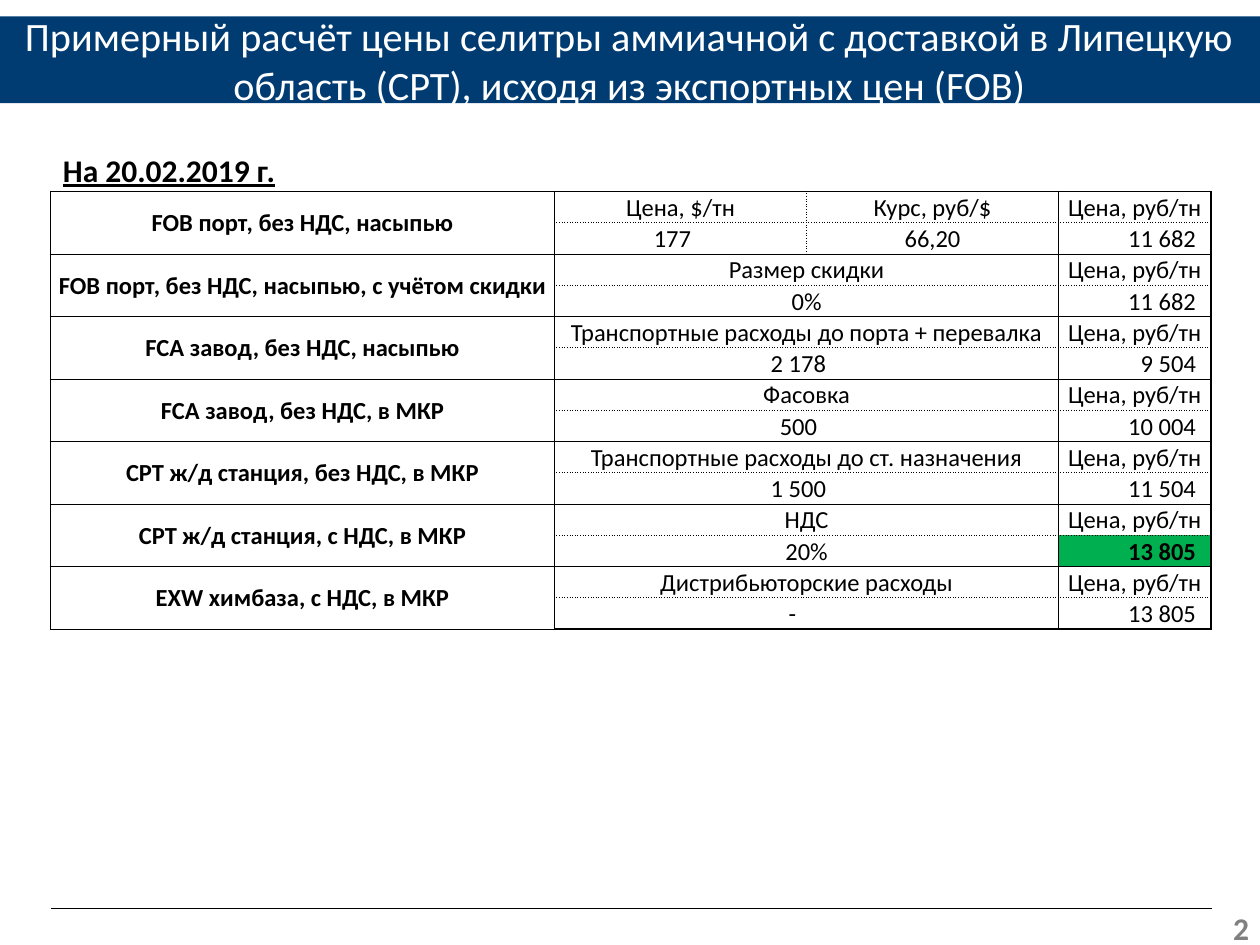
from typing import NamedTuple

from lxml import etree
from pptx import Presentation
from pptx import util as u
from pptx.dml import color
from pptx.enum import shapes, text
from pptx.oxml import ns

BLACK, WHITE, NAVY, GREEN, GRAY = "000000", "FFFFFF", "003C72", "00B050", "808080"
CENTER, RIGHT = text.PP_ALIGN.CENTER, text.PP_ALIGN.RIGHT
LEFT_EDGE, RIGHT_EDGE = 1.02, 24.43
COLUMN_WIDTHS = (10.16, 5.08, 5.08, 3.07)
ROW_HEIGHT = 0.63
CELL_INSET, FIGURE_INSET, DASH_INSET = 0.03, 0.36, 0.6


class Stage(NamedTuple):
    """One step of the price build-up, drawn as two table rows."""
    basis: str
    factors: tuple[str, ...]
    values: tuple[str, ...]
    price: str
    highlighted: bool = False


class Border(NamedTuple):
    points: float
    dash: str = "solid"


THICK, THIN, DOTTED = Border(1), Border(0.5), Border(0.5, "sysDot")

STAGES = (
    Stage("FOB порт, без НДС, насыпью", ("Цена, $/тн", "Курс, руб/$"), ("177", "66,20"), "11 682"),
    Stage("FOB порт, без НДС, насыпью, с учётом скидки", ("Размер скидки",), ("0%",), "11 682"),
    Stage("FCA завод, без НДС, насыпью", ("Транспортные расходы до порта + перевалка",),
          ("2 178",), "9 504"),
    Stage("FCA завод, без НДС, в МКР", ("Фасовка",), ("500",), "10 004"),
    Stage("СРТ ж/д станция, без НДС, в МКР", ("Транспортные расходы до ст. назначения",),
          ("1 500",), "11 504"),
    Stage("СРТ ж/д станция, с НДС, в МКР", ("НДС",), ("20%",), "13 805", True),
    Stage("EXW химбаза, с НДС, в МКР", ("Дистрибьюторские расходы",), ("-",), "13 805"),
)


def rgb(value: str) -> color.RGBColor:
    return color.RGBColor.from_string(value)


def write(frame, wording: str, size: float, hue: str = BLACK, align=None, **formats) -> None:
    para = frame.paragraphs[0]
    para.alignment = align
    span = para.add_run()
    span.text = wording
    span.font.color.rgb = rgb(hue)
    for name, value in {"name": "Calibri", "size": u.Pt(size), **formats}.items():
        setattr(span.font, name, value)


def place(shape, left: float, top: float, width: float, height: float) -> None:
    for name, value in {"left": left, "top": top, "width": width, "height": height}.items():
        setattr(shape, name, u.Cm(value))


def set_borders(cell, **borders: Border) -> None:
    """Draw cell edges; keys are L, R, T and B, in that order."""
    properties = cell._tc.get_or_add_tcPr()
    for side, border in borders.items():
        line = etree.SubElement(properties, ns.qn(f"a:ln{side}"), w=str(u.Pt(border.points)))
        fill = etree.SubElement(line, ns.qn("a:solidFill"))
        etree.SubElement(fill, ns.qn("a:srgbClr"), val=BLACK)
        etree.SubElement(line, ns.qn("a:prstDash"), val=border.dash)


def fill_cell(cell, wording: str, align=CENTER, right_inset: float = CELL_INSET,
              bold: bool = False) -> None:
    formats = {"margin_left": u.Cm(CELL_INSET), "margin_top": u.Cm(CELL_INSET),
               "margin_right": u.Cm(right_inset), "margin_bottom": 0,
               "vertical_anchor": text.MSO_ANCHOR.MIDDLE}
    for name, value in formats.items():
        setattr(cell, name, value)
    write(cell.text_frame, wording, 14, align=align, bold=bold)


def value_inset(value: str) -> float:
    """Plain amounts sit a little left of centre; percentages and rates do not."""
    if value == "-":
        return DASH_INSET
    return CELL_INSET if "%" in value or "," in value else FIGURE_INSET


def frame_cells(table) -> None:
    last_row = len(table.rows) - 1
    for row in range(last_row + 1):
        upper = row % 2 == 0
        for column in range(len(table.columns)):
            cell = table.cell(row, column)
            inner = THIN if column == 0 else DOTTED
            split = row < 2
            set_borders(
                cell,
                L=DOTTED if split and column == 2 else THICK,
                R=DOTTED if split and column == 1 else THICK,
                T=THICK if row == 0 else THIN if upper else inner,
                B=THICK if row == last_row else inner if upper else THIN)
            cell.fill.background()


def add_price_table(page) -> None:
    rows = 2 * len(STAGES)
    frame = page.shapes.add_table(rows, len(COLUMN_WIDTHS), u.Cm(LEFT_EDGE), u.Cm(3.86),
                                  u.Cm(sum(COLUMN_WIDTHS)), u.Cm(rows * ROW_HEIGHT))
    table = frame.table
    table.first_row = table.horz_banding = False
    for column, width in zip(table.columns, COLUMN_WIDTHS):
        column.width = u.Cm(width)
    for row in table.rows:
        row.height = u.Cm(ROW_HEIGHT)
    frame_cells(table)
    for index, stage in enumerate(STAGES):
        top, bottom = 2 * index, 2 * index + 1
        table.cell(top, 0).merge(table.cell(bottom, 0))
        fill_cell(table.cell(top, 0), stage.basis, bold=True)
        if len(stage.factors) == 1:
            for row in (top, bottom):
                table.cell(row, 1).merge(table.cell(row, 2))
        for column, (factor, value) in enumerate(zip(stage.factors, stage.values), start=1):
            fill_cell(table.cell(top, column), factor)
            fill_cell(table.cell(bottom, column), value, right_inset=value_inset(value))
        fill_cell(table.cell(top, 3), "Цена, руб/тн")
        price = table.cell(bottom, 3)
        fill_cell(price, stage.price, RIGHT, 0.3, stage.highlighted)
        if stage.highlighted:
            price.fill.solid()
            price.fill.fore_color.rgb = rgb(GREEN)


def add_title(page, wording: str) -> None:
    title = page.shapes.title
    place(title, 0, 0.33, 25.4, 1.75)
    title.fill.solid()
    title.fill.fore_color.rgb = rgb(NAVY)
    frame = title.text_frame
    frame.auto_size = text.MSO_AUTO_SIZE.NONE
    frame.vertical_anchor = text.MSO_ANCHOR.MIDDLE
    write(frame, wording, 23, WHITE, CENTER)


def add_footer(page) -> None:
    rule = page.shapes.add_connector(shapes.MSO_CONNECTOR.STRAIGHT, u.Cm(LEFT_EDGE),
                                     u.Cm(18.31), u.Cm(RIGHT_EDGE), u.Cm(18.31))
    rule.line.color.rgb = rgb(BLACK)
    rule.line.width = u.Pt(0.75)
    etree.SubElement(rule._element.spPr, ns.qn("a:effectLst"))
    number = page.shapes.add_textbox(u.Cm(24.61), u.Cm(18.36), u.Cm(0.79), u.Cm(0.69))
    number.text_frame.word_wrap = True
    number.text_frame.vertical_anchor = text.MSO_ANCHOR.MIDDLE
    write(number.text_frame, "2", 18, GRAY, RIGHT, bold=True)


def main() -> None:
    deck = Presentation()
    deck.slide_width, deck.slide_height = u.Cm(25.4), u.Cm(19.05)
    page = deck.slides.add_slide(deck.slide_layouts.get_by_name("Title Only"))
    add_title(page, "Примерный расчёт цены селитры аммиачной с доставкой в Липецкую "
                    "область (CPT), исходя из экспортных цен (FOB)")
    add_footer(page)
    add_price_table(page)
    date = page.shapes.add_textbox(u.Cm(LEFT_EDGE), u.Cm(2.92), u.Cm(4.8), u.Cm(1.02))
    date.text_frame.word_wrap = False
    write(date.text_frame, "На 20.02.2019 г.", 18, bold=True, underline=True)
    deck.save("out.pptx")


if __name__ == "__main__":
    main()
